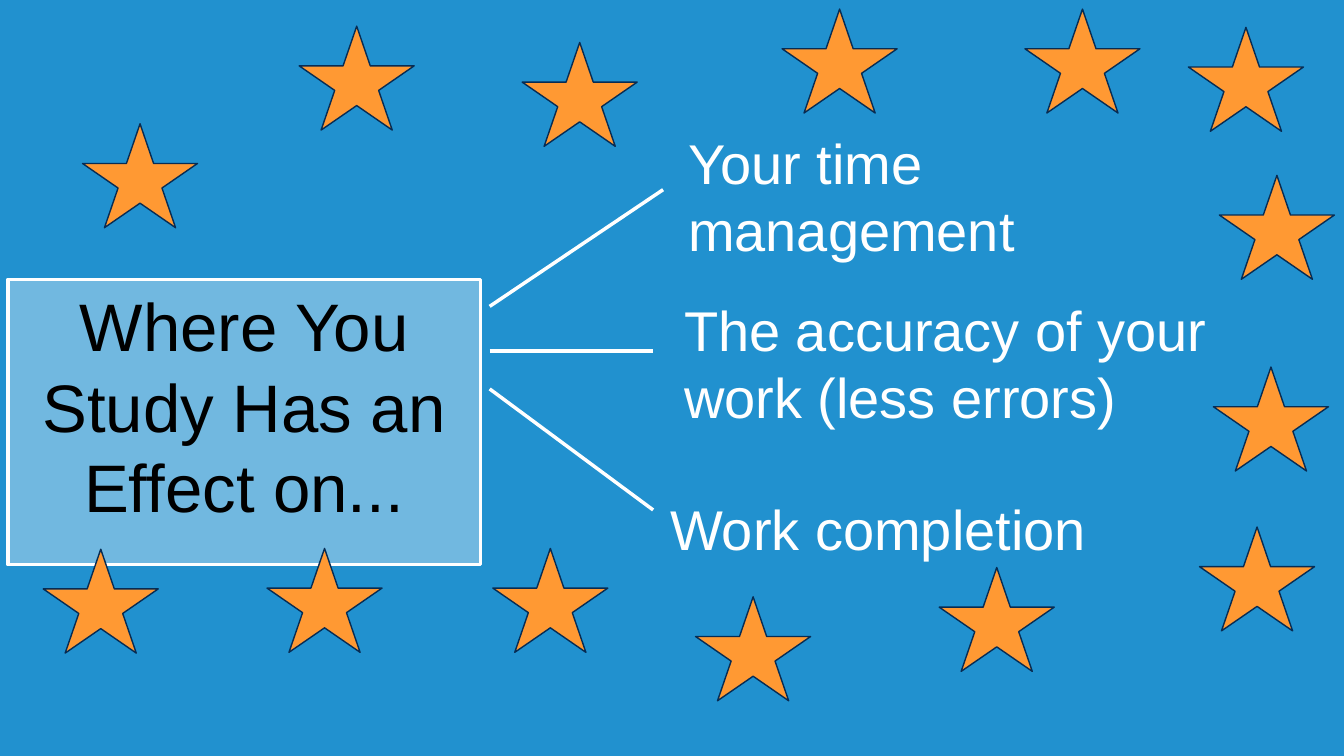
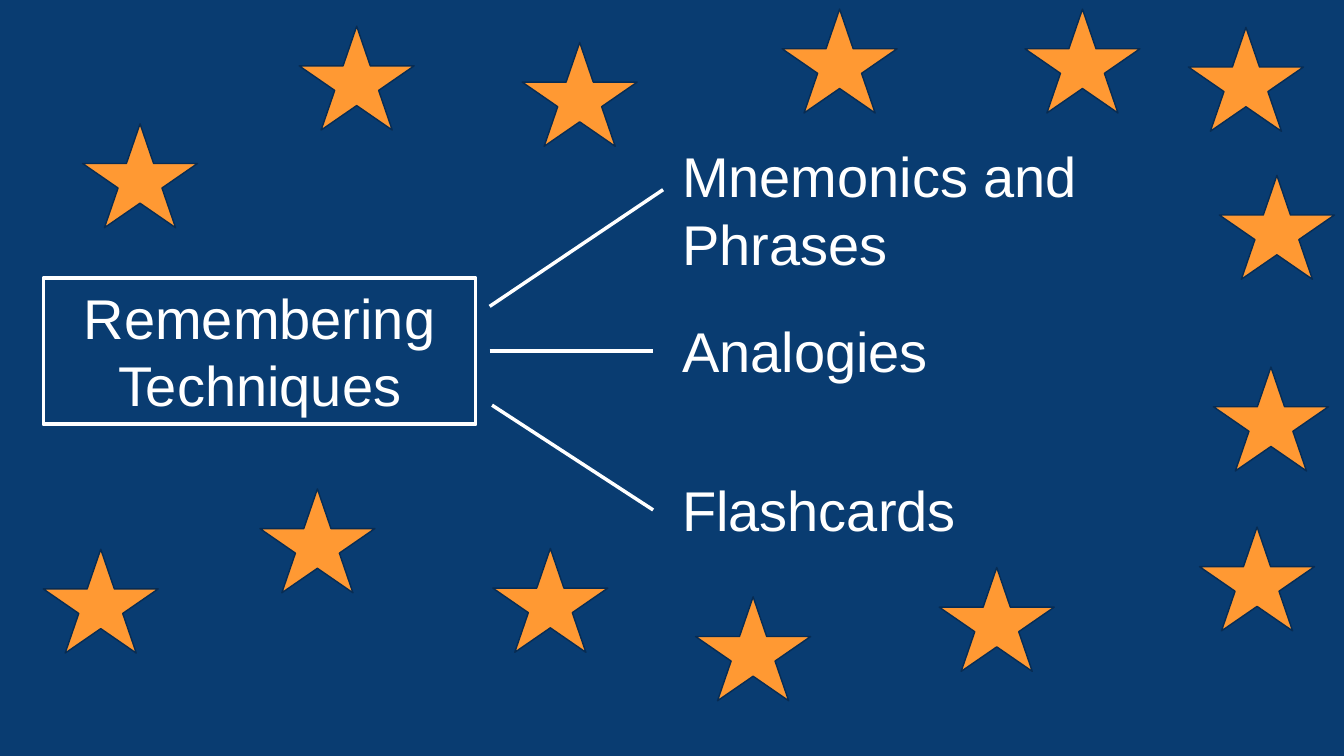
from lxml import etree
from pptx import Presentation
from pptx.dml.color import RGBColor
from pptx.enum.shapes import MSO_CONNECTOR, MSO_SHAPE
from pptx.enum.text import MSO_ANCHOR, MSO_AUTO_SIZE, PP_ALIGN
from pptx.oxml.ns import qn
from pptx.util import Cm, Pt

STAR, LINE = MSO_SHAPE.STAR_5_POINT, MSO_CONNECTOR.STRAIGHT
TOP, NO_FIT = MSO_ANCHOR.TOP, MSO_AUTO_SIZE.NONE
LEFT, CENTER = PP_ALIGN.LEFT, PP_ALIGN.CENTER

SKY = RGBColor(0x21, 0x91, 0xCF)
NAVY = RGBColor(0x09, 0x3C, 0x71)
WHITE = RGBColor(0xFF, 0xFF, 0xFF)
BLACK = RGBColor(0x00, 0x00, 0x00)
ORANGE = RGBColor(0xFF, 0x99, 0x33)
EDGE = RGBColor(0x07, 0x2C, 0x54)

FONT, SIZE, RULE = "Arial", 40, 2.5
STAR_W, STAR_H = 2.9, 2.62

# Content, all lengths in cm
SLIDES = [
    {
        "back": SKY,
        "title": "Where You Study Has an Effect on...",
        "box": (0.2, 7.04, 11.91, 7.19),
        "fill": WHITE, "alpha": 36, "ink": BLACK, "size": 48,
        "items": [
            ("Your time management", (17.09, 3.12, 14.33, 3.68)),
            ("The accuracy of your work (less errors)",
             (16.99, 7.32, 14.33, 3.68)),
            ("Work completion", (16.64, 12.34, 15.06, 1.96)),
        ],
        "low": (12.34, 9.8),
        "star": (6.73, 13.82),
    },
    {
        "back": NAVY,
        "title": "Remembering Techniques",
        "box": (1.09, 7.01, 10.9, 3.68),
        "fill": NAVY, "alpha": 100, "ink": WHITE, "size": SIZE,
        "items": [
            ("Mnemonics and Phrases", (16.94, 3.45, 14.33, 3.68)),
            ("Analogies", (16.94, 7.85, 14.33, 1.96)),
            ("Flashcards", (16.94, 11.86, 15.06, 1.96)),
        ],
        "low": (12.4, 10.21),
        "star": (6.55, 12.32),
    },
]

# Shared by both slides: two upper lines, end of the low line, stars
LINES = [((12.34, 7.72), (16.71, 4.78)), ((12.34, 8.84), (16.46, 8.84))]
LOW_END = (16.46, 12.85)
STARS = [
    (7.54, 0.66), (30.73, 4.42), (29.95, 0.69), (25.83, 0.23),
    (19.71, 0.23), (2.08, 3.12), (13.16, 1.07), (30.23, 13.28),
    (23.67, 14.3), (17.53, 15.04), (12.42, 13.82), (30.58, 9.25),
    (1.09, 13.84),
]


def lengths(values):
    return [Cm(v) for v in values]


def paint(shape, fill, edge, width):
    shape.fill.solid()
    shape.fill.fore_color.rgb = fill
    shape.line.color.rgb = edge
    shape.line.width = Pt(width)


def write(shape, text, size, ink, align):
    frame = shape.text_frame
    frame.text = text
    frame.word_wrap = True
    frame.auto_size = NO_FIT
    frame.vertical_anchor = TOP
    para = frame.paragraphs[0]
    para.alignment = align
    font = para.runs[0].font
    font.name, font.size, font.color.rgb = FONT, Pt(size), ink


def add_title(slide, data):
    box = slide.shapes.title
    box.left, box.top, box.width, box.height = lengths(data["box"])
    paint(box, data["fill"], WHITE, RULE)
    if data["alpha"] < 100:
        color = box.fill._xPr.find(qn("a:solidFill"))[0]
        alpha = etree.SubElement(color, qn("a:alpha"))
        alpha.set("val", str(data["alpha"] * 1000))
    write(box, data["title"], data["size"], data["ink"], CENTER)


def add_line(slide, start, end):
    line = slide.shapes.add_connector(LINE, *lengths(start + end))
    line.line.color.rgb = WHITE
    line.line.width = Pt(RULE)
    etree.SubElement(line._element.spPr, qn("a:effectLst"))


def add_star(slide, spot):
    star = slide.shapes.add_shape(STAR, *lengths(spot + (STAR_W, STAR_H)))
    star.shadow.inherit = False
    paint(star, ORANGE, EDGE, 1)


def build(deck, data):
    slide = deck.slides.add_slide(deck.slide_layouts.get_by_name("Title Only"))
    slide.background.fill.solid()
    slide.background.fill.fore_color.rgb = data["back"]
    add_title(slide, data)
    for text, area in data["items"]:
        box = slide.shapes.add_textbox(*lengths(area))
        write(box, text, SIZE, WHITE, LEFT)
    for start, end in LINES + [(data["low"], LOW_END)]:
        add_line(slide, start, end)
    for spot in STARS + [data["star"]]:
        add_star(slide, spot)


def main():
    deck = Presentation()
    deck.slide_width, deck.slide_height = Cm(33.87), Cm(19.05)
    for data in SLIDES:
        build(deck, data)
    deck.save("out.pptx")


if __name__ == "__main__":
    main()
